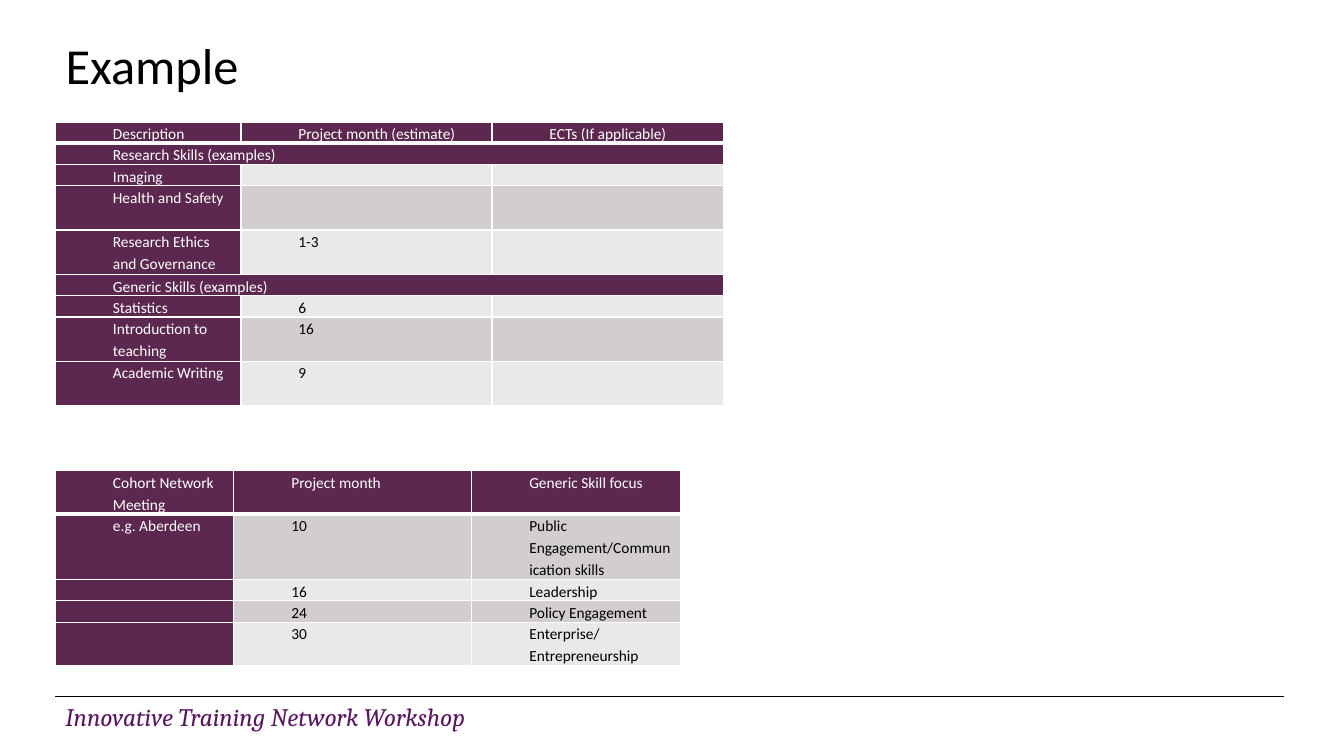
"""Build the example slide with its training and cohort meeting tables."""
from pptx import Presentation
from pptx import util as u
from pptx.dml.color import RGBColor
from pptx.enum import shapes, text
from pptx.oxml.ns import qn
from lxml import etree

PX = 9144
BLACK = RGBColor(0x00, 0x00, 0x00)
WHITE = RGBColor(0xFF, 0xFF, 0xFF)
PLUM = RGBColor(0x5C, 0x28, 0x4F)
VIOLET = RGBColor(0x59, 0x15, 0x5F)
LIGHT = RGBColor(0xEA, 0xE8, 0xE9)
DARK = RGBColor(0xD2, 0xCD, 0xD0)

TRAINING = [
    ("Description", "Project month (estimate)", "ECTs (If applicable)"),
    ("Research Skills (examples)",),
    ("Imaging", "", ""),
    ("Health and Safety", "", ""),
    ("Research Ethics and Governance", "1-3", ""),
    ("Generic Skills (examples)",),
    ("Statistics", "6", ""),
    ("Introduction to teaching", "16", ""),
    ("Academic Writing", "9", ""),
]
MEETINGS = [
    ("Cohort Network Meeting", "Project month", "Generic Skill focus"),
    ("e.g. Aberdeen", "10", "Public Engagement/Communication skills"),
    ("", "16", "Leadership"),
    ("", "24", "Policy Engagement"),
    ("", "30", "Enterprise/Entrepreneurship"),
]


class Deck:
    def __init__(self):
        self.prs = Presentation()
        self.prs.slide_width = 1333 * PX
        self.prs.slide_height = 750 * PX
        self.s = self.prs.slides.add_slide(self.prs.slide_layouts[5])

    def run(self, p, words, size, color, font="Calibri", italic=False):
        r = p.add_run()
        r.text = words
        r.font.name = font
        r.font.size = u.Pt(size)
        r.font.italic = italic
        r.font.color.rgb = color

    def place(self, sp, x, y, w, h):
        sp.left, sp.top, sp.width, sp.height = (v * PX for v in (x, y, w, h))

    def title(self, words, *box):
        sp = self.s.shapes.title
        self.place(sp, *box)
        tf = sp.text_frame
        tf.vertical_anchor = text.MSO_ANCHOR.MIDDLE
        p = tf.paragraphs[0]
        p.alignment = text.PP_ALIGN.LEFT
        self.run(p, words, 36, BLACK)

    def footer(self, words, *box):
        sp = self.s.shapes.add_textbox(*(v * PX for v in box))
        tf = sp.text_frame
        tf.word_wrap = True
        self.run(tf.paragraphs[0], words, 18, VIOLET, "Cambria", True)

    def rule(self, x1, x2, y):
        ends = (v * PX for v in (x1, y, x2, y))
        ln = self.s.shapes.add_connector(shapes.MSO_CONNECTOR.STRAIGHT, *ends)
        ln.line.color.rgb = BLACK
        ln.line.width = u.Pt(0.75)
        etree.SubElement(ln._element.spPr, qn("a:effectLst"))

    def borders(self, cell, bottom):
        tc_pr = cell._tc.get_or_add_tcPr()
        for side, width in (("L", 1), ("R", 1), ("T", 1), ("B", bottom)):
            ln = etree.SubElement(tc_pr, qn(f"a:ln{side}"), w=str(u.Pt(width)))
            fill = etree.SubElement(ln, qn("a:solidFill"))
            etree.SubElement(fill, qn("a:srgbClr"), val=str(WHITE))

    def cell(self, cell, words, fill, color, bottom):
        self.borders(cell, bottom)
        cell.fill.solid()
        cell.fill.fore_color.rgb = fill
        cell.margin_left = cell.margin_right = 7 * PX
        cell.margin_top = cell.margin_bottom = 0
        p = cell.text_frame.paragraphs[0]
        p.line_spacing = 1.15
        p._p.get_or_add_pPr().set("marL", str(50 * PX))
        if words:
            self.run(p, words, 11, color)
        else:
            etree.SubElement(p._p, qn("a:endParaRPr"), sz="1100")

    def table(self, x, y, widths, heights, rows):
        box = (x, y, sum(widths), sum(heights))
        frame = self.s.shapes.add_table(len(rows), len(widths), *(v * PX for v in box))
        tbl = frame.table
        tbl.first_row = tbl.horz_banding = False
        for col, w in zip(tbl.columns, widths):
            col.width = w * PX
        for i, (row, h) in enumerate(zip(rows, heights)):
            tbl.rows[i].height = h * PX
            band = LIGHT if i % 2 == 0 else DARK
            section = len(row) == 1
            if section:
                tbl.cell(i, 0).merge(tbl.cell(i, len(widths) - 1))
            for j in range(len(widths)):
                words = row[j] if j < len(row) else ""
                head = i == 0 or j == 0 or section
                fill, color = (PLUM, WHITE) if head else (band, BLACK)
                self.cell(tbl.cell(i, j), words, fill, color, 3 if i == 0 else 1)


def main():
    deck = Deck()
    deck.rule(55, 1273, 691)
    deck.title("Example", 55, 28, 1219, 71)
    deck.footer("Innovative Training Network Workshop", 55, 691, 707, 38)
    deck.table(55, 121, (184, 249, 230), (21, 21, 21, 44, 44, 21, 21, 44, 44), TRAINING)
    deck.table(55, 467, (177, 236, 207), (43, 65, 21, 21, 43), MEETINGS)
    deck.prs.save("out.pptx")


if __name__ == "__main__":
    main()
